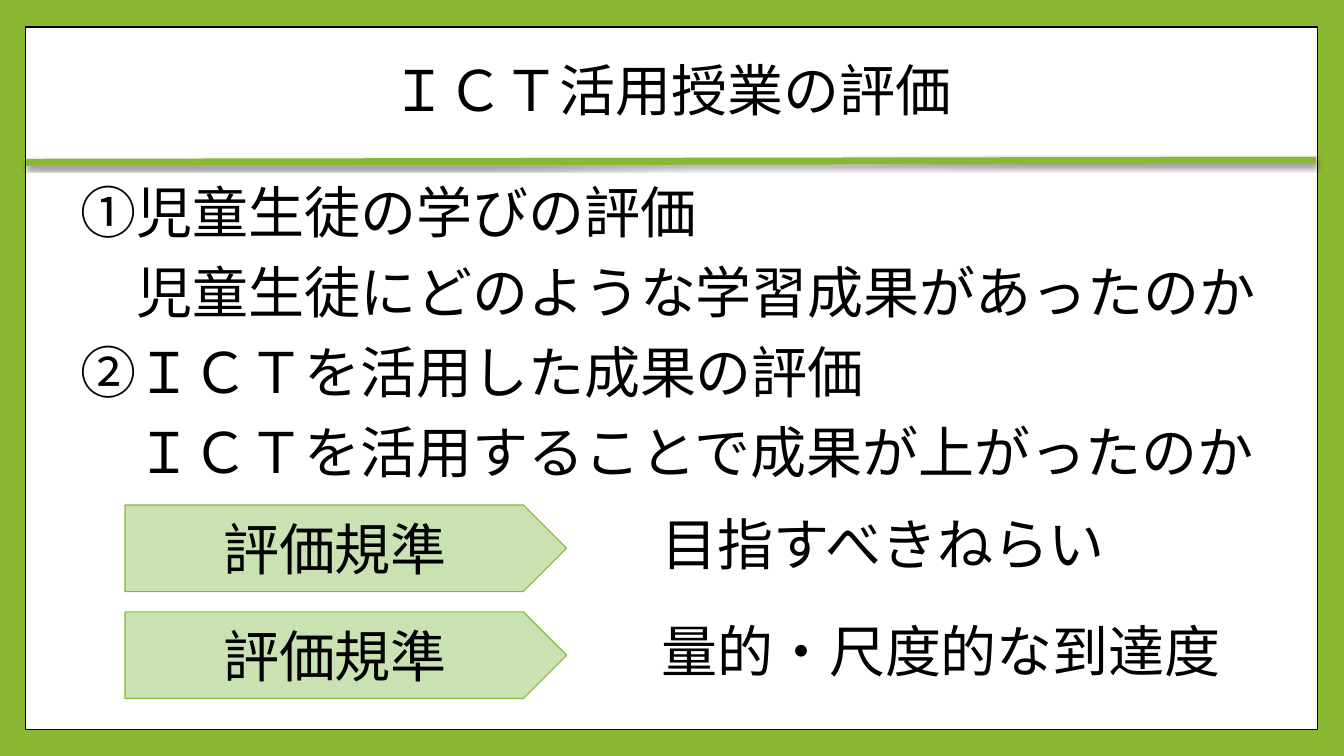
from lxml import etree
from pptx import Presentation
from pptx import util as u
from pptx.dml.color import RGBColor
from pptx.enum import shapes, text
from pptx.oxml import ns

COLORS = {"green": "8AB833", "pale": "CAE1B1", "white": "FFFFFF", "black": "000000"}
POINTS = [
    "①児童生徒の学びの評価",
    "　児童生徒にどのような学習成果があったのか",
    "②ＩＣＴを活用した成果の評価",
    "　ＩＣＴを活用することで成果が上がったのか",
]
CRITERIA = [("評価規準", "目指すべきねらい"), ("評価規準", "量的・尺度的な到達度")]


def rgb(name):
    return RGBColor.from_string(COLORS[name])


def inches(*values):
    return [u.Inches(v) for v in values]


def add_box(s, preset, box, fill, line, width):
    sp = s.shapes.add_shape(preset, *inches(*box))
    sp.shadow.inherit = False
    sp.fill.solid()
    sp.fill.fore_color.rgb = rgb(fill)
    sp.line.color.rgb = rgb(line)
    sp.line.width = u.Pt(width)
    return sp


def write(sp, lines, font="Arial", align=text.PP_ALIGN.LEFT, anchor=text.MSO_ANCHOR.TOP):
    tf = sp.text_frame
    tf.word_wrap = True
    tf.vertical_anchor = anchor
    tf.text = "\n".join(lines)
    for p in tf.paragraphs:
        p.alignment = align
        p.font.size = u.Pt(40)
        p.font.name = font
        p.font.color.rgb = rgb("black")
    return tf


def add_text(s, box, lines, **style):
    return write(s.shapes.add_textbox(*inches(*box)), lines, **style)


def add_shadow(line):
    effects = etree.SubElement(line._element.spPr, ns.qn("a:effectLst"))
    shadow = etree.SubElement(
        effects, ns.qn("a:outerShdw"), blurRad=str(u.Pt(3)), dist=str(u.Pt(2)),
        dir="5400000", rotWithShape="0")
    color = etree.SubElement(shadow, ns.qn("a:srgbClr"), val=COLORS["black"])
    etree.SubElement(color, ns.qn("a:alpha"), val="45000")


def add_frame(s, box):
    s.background.fill.solid()
    s.background.fill.fore_color.rgb = rgb("green")
    add_box(s, shapes.MSO_SHAPE.RECTANGLE, box, "white", "black", 1)


def add_header(s, box):
    left, top, width, height = box
    rule = s.shapes.add_connector(
        shapes.MSO_CONNECTOR.STRAIGHT,
        *inches(left, top + height + 0.11, left + width - 0.01, top + height + 0.09))
    rule.line.color.rgb = rgb("green")
    rule.line.width = u.Pt(5)
    add_shadow(rule)
    tf = add_text(s, box, ["ＩＣＴ活用授業の評価"], font="Karla",
                  align=text.PP_ALIGN.CENTER, anchor=text.MSO_ANCHOR.MIDDLE)
    tf.paragraphs[0].line_spacing = 0.9


def add_points(s, box):
    tf = add_text(s, box, POINTS)
    for p in tf.paragraphs:
        p.line_spacing = 0.9
        p.space_before = u.Pt(14)
        pPr = p._p.get_or_add_pPr()
        pPr.set("marL", str(u.Inches(0.05)))
        pPr.set("indent", "0")


def add_criteria(s, box):
    left, top, width, height = box
    pitch = height / len(CRITERIA)
    for i, (label, meaning) in enumerate(CRITERIA):
        y = top + i * pitch
        arrow = add_box(s, shapes.MSO_SHAPE.PENTAGON, (left, y, 4.38, 0.86),
                        "pale", "green", 0.79)
        write(arrow, [label], align=text.PP_ALIGN.CENTER, anchor=text.MSO_ANCHOR.MIDDLE)
        tf = add_text(s, (left + 5.22, y, width - 5.22, 0.77), [meaning])
        tf.auto_size = text.MSO_AUTO_SIZE.SHAPE_TO_FIT_TEXT


def main():
    prs = Presentation()
    prs.slide_width, prs.slide_height = inches(13.33, 7.5)
    s = prs.slides.add_slide(prs.slide_layouts[6])
    add_frame(s, (0.25, 0.27, 12.82, 6.97))
    add_header(s, (0.26, 0.36, 12.8, 1.14))
    add_points(s, (0.65, 1.79, 12, 5.34))
    add_criteria(s, (1.24, 5.01, 11.12, 2.12))
    prs.save("out.pptx")


if __name__ == "__main__":
    main()
